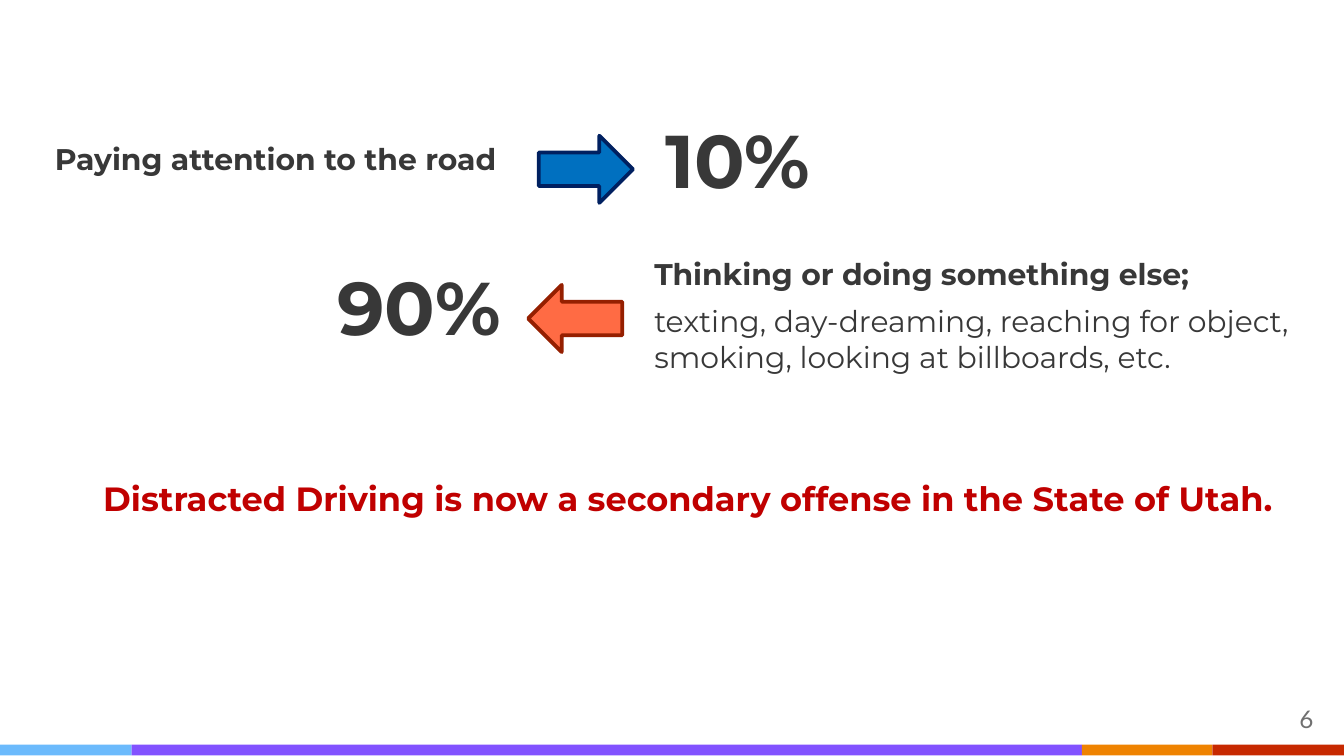
from pptx import Presentation
from pptx.dml.color import RGBColor
from pptx.enum.shapes import MSO_SHAPE
from pptx.enum.text import MSO_ANCHOR, PP_ALIGN
from pptx.util import Inches, Pt

SKY = RGBColor(0x6B, 0xBA, 0xFC)
PURPLE = RGBColor(0x82, 0x52, 0xFF)
ORANGE = RGBColor(0xEF, 0x83, 0x00)
RUST = RGBColor(0xC7, 0x29, 0x00)
GREY = RGBColor(0x70, 0x70, 0x70)
CHARCOAL = RGBColor(0x38, 0x38, 0x38)
RED = RGBColor(0xC0, 0x00, 0x00)
BLUE = RGBColor(0x00, 0x70, 0xC0)
NAVY = RGBColor(0x00, 0x20, 0x60)
CORAL = RGBColor(0xFF, 0x6B, 0x44)
MAROON = RGBColor(0x95, 0x1F, 0x00)

# Widescreen page, 16:9
deck = Presentation()
deck.slide_width = Inches(10)
deck.slide_height = Inches(10) * 9 // 16
page = deck.slides.add_slide(deck.slide_layouts[6])


def add_filled(preset, left, top, width, height, fill):
    shape = page.shapes.add_shape(
        preset, Inches(left), Inches(top), Inches(width), Inches(height))
    shape.shadow.inherit = False
    shape.fill.solid()
    shape.fill.fore_color.rgb = fill
    shape.line.fill.background()
    return shape


def add_text(left, top, width, height, lines, size, color=CHARCOAL, font="Montserrat"):
    """Add a text box with one paragraph per (text, bold) pair."""
    box = page.shapes.add_textbox(
        Inches(left), Inches(top), Inches(width), Inches(height))
    frame = box.text_frame
    frame.word_wrap = True
    frame.vertical_anchor = MSO_ANCHOR.TOP
    frame.margin_left = frame.margin_right = Inches(0.1)
    frame.margin_top = frame.margin_bottom = Inches(0.1)
    for index, (text, bold) in enumerate(lines):
        para = frame.add_paragraph() if index else frame.paragraphs[0]
        if index:
            para.space_before = Pt(6)
        span = para.add_run()
        span.text = text
        span.font.name = font
        span.font.size = Pt(size)
        span.font.bold = bold
        span.font.color.rgb = color
    return frame.paragraphs[0]


# Footer stripe, laid end to end
left = 0
for width, color in [(0.98, SKY), (7.07, PURPLE), (0.97, ORANGE), (0.98, RUST)]:
    add_filled(MSO_SHAPE.RECTANGLE, left, 5.54, width, 0.08, color)
    left += width

# Page number
number = add_text(9.27, 5.14, 0.6, 0.34, [("6", False)], 13, GREY, "Lato")
number.alignment = PP_ALIGN.RIGHT

# Activities
add_text(4.77, 1.8, 5.2, 1.35, [
    ("Thinking or doing something else;", True),
    ("texting, day-dreaming, reaching for object, "
     "smoking, looking at billboards, etc.", False),
], 16)
add_text(0.31, 0.95, 3.7, 0.62, [("Paying attention to the road", True)], 16)

# Percentages
add_text(4.85, 0.75, 2.99, 1.05, [("10%", True)], 40)
add_text(2.41, 1.84, 1.59, 1.05, [("90%", True)], 40)

# Closing statement
statement = add_text(0.53, 3.49, 9.34, 0.89, [
    ("Distracted Driving is now a secondary offense in the State of Utah.", True),
], 18, RED)
statement.line_spacing = 0.9
properties = statement._p.get_or_add_pPr()
properties.set("marL", str(Inches(0.14)))
properties.set("indent", "0")

# Arrows between activities and percentages
for preset, left, top, fill, outline in [
    (MSO_SHAPE.RIGHT_ARROW, 4.01, 1.01, BLUE, NAVY),
    (MSO_SHAPE.LEFT_ARROW, 3.93, 2.12, CORAL, MAROON),
]:
    arrow = add_filled(preset, left, top, 0.7, 0.5, fill)
    arrow.line.color.rgb = outline
    arrow.line.width = Pt(2)

deck.save("out.pptx")
